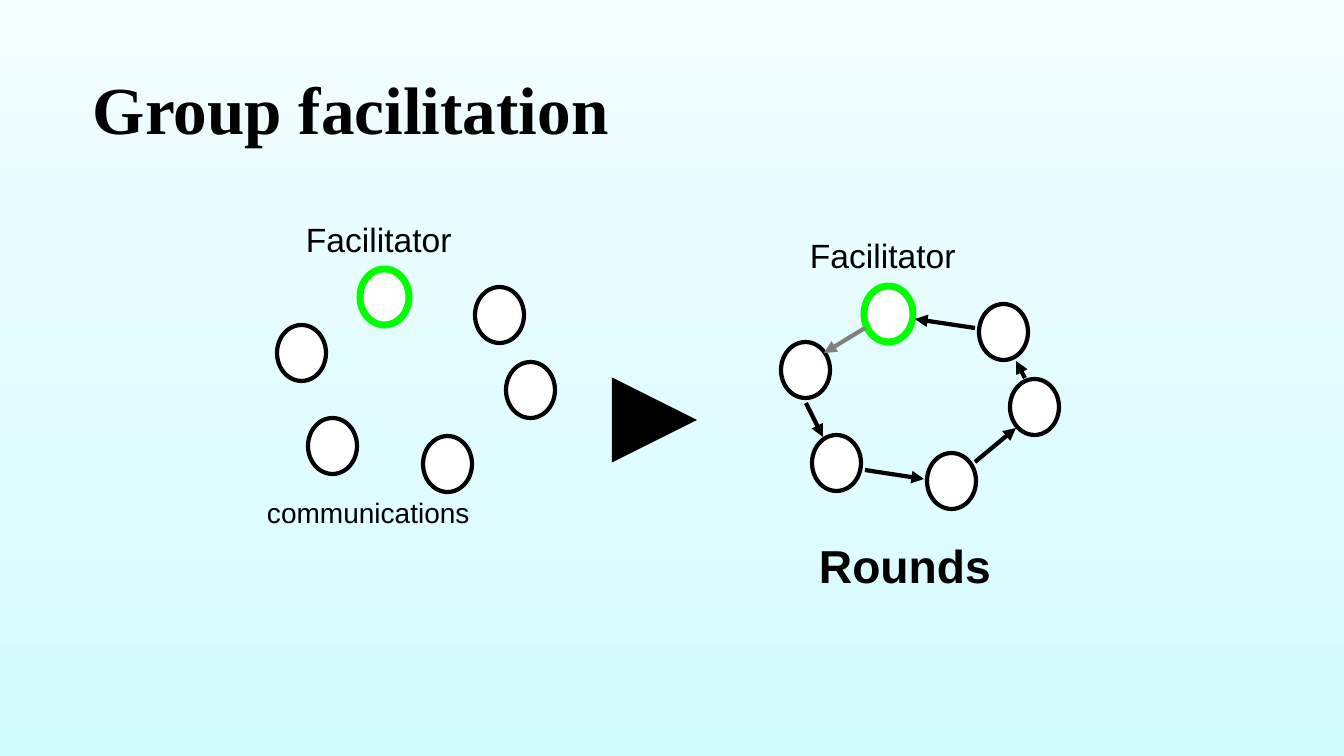
"""Build the group facilitation slide: scattered communications turn into rounds."""
from copy import deepcopy

from pptx import Presentation
from pptx.dml.color import RGBColor
from pptx.enum.shapes import MSO_CONNECTOR, MSO_SHAPE
from pptx.enum.text import MSO_ANCHOR, MSO_AUTO_SIZE
from pptx.oxml.ns import qn
from pptx.util import Emu, Pt
from lxml.etree import SubElement

BLACK = RGBColor(0x00, 0x00, 0x00)
WHITE = RGBColor(0xFF, 0xFF, 0xFF)
GREEN = RGBColor(0x00, 0xFF, 0x00)
GRAY = RGBColor(0x80, 0x80, 0x80)
SKY = [(0, RGBColor(0xD2, 0xFB, 0xFE)),
       (0.35, RGBColor(0xDF, 0xFC, 0xFF)),
       (1, RGBColor(0xF1, 0xFD, 0xFE))]
EMU_PER_PX = 12192000 / 1344


def px(*lengths):
    return [Emu(round(length * EMU_PER_PX)) for length in lengths]


def add_text(box, runs, font="Arial", bold=False):
    frame = slide.shapes.add_textbox(*px(*box)).text_frame
    frame.word_wrap = True
    frame.margin_left = frame.margin_right = frame.margin_top = frame.margin_bottom = 0
    paragraph = frame.paragraphs[0]
    for words, size in runs:
        run = paragraph.add_run()
        run.text = words
        run.font.name = font
        run.font.size = Pt(size)
        run.font.bold = bold
        run.font.color.rgb = BLACK
    return frame


prs = Presentation()
prs.slide_width, prs.slide_height = px(1344, 756)
slide = prs.slides.add_slide(prs.slide_layouts[6])

sky_fill = slide.background.fill
sky_fill.gradient()
sky_fill.gradient_angle = 90
stop_list = next(slide.element.iter(qn("a:gsLst")))
stop_list.append(deepcopy(stop_list[-1]))
for stop, (position, color) in zip(sky_fill.gradient_stops, SKY):
    stop.position = position
    stop.color.rgb = color

title = add_text((93, 40, 1159, 146), [("Group facilitation", 48)], "Times New Roman", True)
title.vertical_anchor = MSO_ANCHOR.MIDDLE
title.paragraphs[0].line_spacing = 0.9

FACILITATOR = (360, 269)
MEMBERS = [(277, 325), (308, 418), (423, 436), (506, 362), (475, 287)]
for shift_x, shift_y in [(0, 0), (504, 17)]:
    for x, y in [FACILITATOR] + MEMBERS:
        leads = (x, y) == FACILITATOR
        person = slide.shapes.add_shape(MSO_SHAPE.OVAL, *px(x + shift_x, y + shift_y, 49, 56))
        person.shadow.inherit = False
        person.fill.solid()
        person.fill.fore_color.rgb = WHITE
        person.line.color.rgb = GREEN if leads else BLACK
        person.line.width = Pt(5 if leads else 3)

LABELS = [
    ((302, 219, 255, 40), [("Facilitator", 24)], False),
    ((263, 496, 313, 33), [("communications", 20)], False),
    ((806, 235, 255, 40), [("Facilitator", 24)], False),
    ((806, 537, 255, 56), [(" ", 23), ("Rounds", 33)], True),
]
for box, runs, bold in LABELS:
    label = add_text(box, runs, bold=bold)
    label.auto_size = MSO_AUTO_SIZE.SHAPE_TO_FIT_TEXT
    label.paragraphs[0].runs[0].font.bold = bold
    label.paragraphs[0]._p.get_or_add_pPr().set("indent", str(px(4)[0]))

ARROWS = [
    ((865, 328, 824, 353), GRAY, 3),
    ((806, 403, 823, 437), BLACK, 3),
    ((865, 470, 924, 479), BLACK, 3),
    ((975, 462, 1016, 428), BLACK, 3),
    ((1025, 378, 1016, 361), BLACK, 3),
    ((975, 328, 915, 319), BLACK, 3),
    ((622, 420, 697, 420), BLACK, 20.25),
]
for ends, color, width in ARROWS:
    arrow = slide.shapes.add_connector(MSO_CONNECTOR.STRAIGHT, *px(*ends))
    arrow.line.color.rgb = color
    arrow.line.width = Pt(width)
    SubElement(arrow.line._get_or_add_ln(), qn("a:tailEnd"), type="triangle")
    SubElement(arrow._element.spPr, qn("a:effectLst"))

prs.save("out.pptx")
